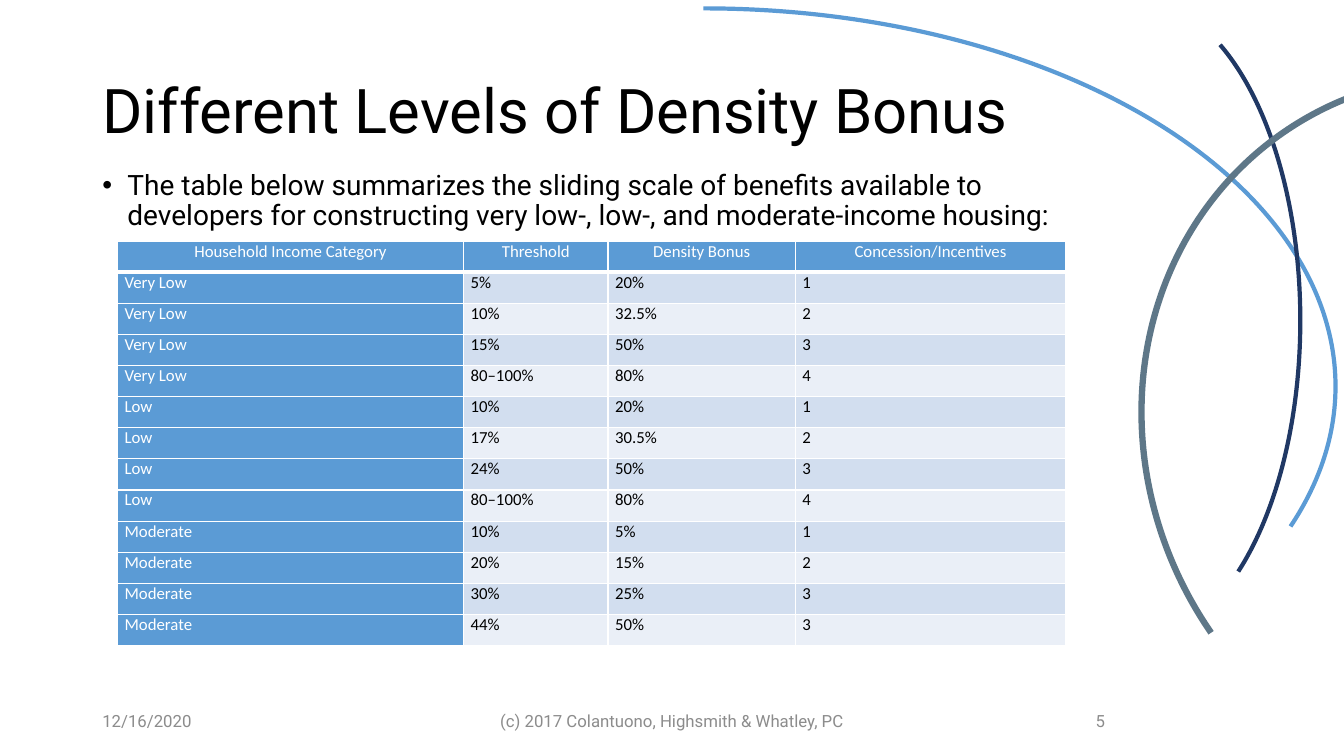
from dataclasses import dataclass

import lxml.etree
import pptx
import pptx.dml.color
import pptx.enum.shapes
import pptx.enum.text
import pptx.oxml.ns
import pptx.slide
import pptx.table
import pptx.text.text
import pptx.util

Align = pptx.enum.text.PP_ALIGN
Anchor = pptx.enum.text.MSO_ANCHOR

GRID_UNIT = pptx.util.Pt(60)
GRID_COLUMNS, GRID_ROWS = 16, 9

COLORS = {
    "sky": "5B9BD5",
    "navy": "203864",
    "slate": "5E7788",
    "black": "000000",
    "white": "FFFFFF",
    "footer": "8C8C8C",
    "band_dark": "D2DEEF",
    "band_light": "EAEFF7",
}


@dataclass(frozen=True)
class Area:
    column: float
    row: float
    columns: float
    rows: float

    def lengths(self) -> list[pptx.util.Length]:
        return [grid(value) for value in (self.column, self.row, self.columns, self.rows)]


@dataclass(frozen=True)
class Arc:
    area: Area
    start: float
    end: float
    color: str
    weight: float
    rotation: float = 0


@dataclass(frozen=True)
class Label:
    area: Area
    text: str
    size: float
    color: str = "black"
    align: Align = Align.LEFT
    anchor: Anchor = Anchor.MIDDLE
    line_spacing: float = 1.0
    bulleted: bool = False


ARCS = [
    Arc(Area(0.85, 0.1, 15.05, 9), 162, 8.05, "sky", 3),
    Arc(Area(11.58, 0, 3.9, 7.63), 172.12, 40.77, "navy", 3),
    Arc(Area(13.37, 1.12, 8.81, 8.17), 161.38, 6.33, "slate", 4.5, 236.3),
]

LABELS = [
    Label(Area(1.1, 0.48, 12, 1.74), "Different Levels of Density Bonus", 44, line_spacing=0.9),
    Label(
        Area(1.1, 1.98, 12, 5.71),
        "The table below summarizes the sliding scale of benefits available to developers "
        "for constructing very low-, low-, and moderate-income housing:",
        20, anchor=Anchor.TOP, line_spacing=0.9, bulleted=True,
    ),
    Label(Area(1.1, 8.34, 3.6, 0.48), "12/16/2020", 12, "footer"),
    Label(Area(5.3, 8.34, 5.4, 0.48), "(c) 2017 Colantuono, Highsmith & Whatley, PC",
          12, "footer", Align.CENTER),
    Label(Area(11.3, 8.34, 3.6, 0.48), "5", 12, "footer", Align.CENTER),
]

TABLE_AREA = Area(1.4, 2.87, 11.29, 4.82)
TABLE_COLUMNS = [4.12, 1.72, 2.23, 3.22]
HEADERS = ["Household Income Category", "Threshold", "Density Bonus", "Concession/Incentives"]
BENEFITS = {
    "Very Low": [("5%", "20%", "1"), ("10%", "32.5%", "2"),
                 ("15%", "50%", "3"), ("80–100%", "80%", "4")],
    "Low": [("10%", "20%", "1"), ("17%", "30.5%", "2"),
            ("24%", "50%", "3"), ("80–100%", "80%", "4")],
    "Moderate": [("10%", "5%", "1"), ("20%", "15%", "2"),
                 ("30%", "25%", "3"), ("44%", "50%", "3")],
}


def grid(units: float) -> pptx.util.Length:
    return pptx.util.Emu(round(units * GRID_UNIT))


def rgb(name: str) -> pptx.dml.color.RGBColor:
    return pptx.dml.color.RGBColor.from_string(COLORS[name])


def format_paragraph(paragraph: pptx.text.text._Paragraph, font: str, size: float,
                     color: str, align: Align) -> None:
    paragraph.alignment = align
    for run in paragraph.runs:
        run.font.name = font
        run.font.size = pptx.util.Pt(size)
        run.font.bold = False
        run.font.color.rgb = rgb(color)


def add_bullet(paragraph: pptx.text.text._Paragraph) -> None:
    properties = paragraph._p.get_or_add_pPr()
    indent = pptx.util.Inches(0.25)
    properties.set("marL", str(indent))
    properties.set("indent", str(-indent))
    font = lxml.etree.SubElement(properties, pptx.oxml.ns.qn("a:buFont"))
    font.set("typeface", "Arial")
    bullet = lxml.etree.SubElement(properties, pptx.oxml.ns.qn("a:buChar"))
    bullet.set("char", "•")


def draw_arc(slide: pptx.slide.Slide, arc: Arc) -> None:
    shape = slide.shapes.add_shape(pptx.enum.shapes.MSO_SHAPE.ARC, *arc.area.lengths())
    shape.adjustments[0] = arc.start
    shape.adjustments[1] = arc.end
    shape.rotation = arc.rotation
    shape.shadow.inherit = False
    shape.fill.background()
    shape.line.color.rgb = rgb(arc.color)
    shape.line.width = pptx.util.Pt(arc.weight)


def draw_label(slide: pptx.slide.Slide, label: Label) -> None:
    text_frame = slide.shapes.add_textbox(*label.area.lengths()).text_frame
    text_frame.word_wrap = True
    text_frame.vertical_anchor = label.anchor
    text_frame.text = label.text
    paragraph = text_frame.paragraphs[0]
    if label.bulleted:
        add_bullet(paragraph)
    paragraph.line_spacing = label.line_spacing
    format_paragraph(paragraph, "Roboto", label.size, label.color, label.align)


def add_borders(cell: pptx.table._Cell, bottom_weight: float) -> None:
    properties = cell._tc.get_or_add_tcPr()
    for side, weight in {"L": 1, "R": 1, "T": 1, "B": bottom_weight}.items():
        line = lxml.etree.SubElement(properties, pptx.oxml.ns.qn(f"a:ln{side}"))
        line.set("w", str(pptx.util.Pt(weight)))
        fill = lxml.etree.SubElement(line, pptx.oxml.ns.qn("a:solidFill"))
        color = lxml.etree.SubElement(fill, pptx.oxml.ns.qn("a:srgbClr"))
        color.set("val", COLORS["white"])


def draw_cell(cell: pptx.table._Cell, text: str, row: int, column: int) -> None:
    is_header = row == 0
    is_accent = is_header or column == 0
    band = "band_dark" if row % 2 else "band_light"
    cell.margin_left = cell.margin_right = pptx.util.Inches(0.07)
    cell.margin_top = cell.margin_bottom = 0
    add_borders(cell, 3 if is_header else 1)
    cell.fill.solid()
    cell.fill.fore_color.rgb = rgb("sky" if is_accent else band)
    cell.text_frame.text = text
    format_paragraph(cell.text_frame.paragraphs[0], "Calibri", 12,
                     "white" if is_accent else "black",
                     Align.CENTER if is_header else Align.JUSTIFY)


def draw_benefits_table(slide: pptx.slide.Slide) -> None:
    records = [HEADERS] + [
        [category, *levels] for category, tiers in BENEFITS.items() for levels in tiers
    ]
    table = slide.shapes.add_table(
        len(records), len(HEADERS), *TABLE_AREA.lengths()
    ).table
    for column, width in zip(table.columns, TABLE_COLUMNS):
        column.width = grid(width)
    for row, record in enumerate(records):
        for column, text in enumerate(record):
            draw_cell(table.cell(row, column), text, row, column)


def main() -> None:
    presentation = pptx.Presentation()
    presentation.slide_width = grid(GRID_COLUMNS)
    presentation.slide_height = grid(GRID_ROWS)
    slide = presentation.slides.add_slide(presentation.slide_layouts[6])
    for arc in ARCS:
        draw_arc(slide, arc)
    for label in LABELS:
        draw_label(slide, label)
    draw_benefits_table(slide)
    presentation.save("out.pptx")


if __name__ == "__main__":
    main()
